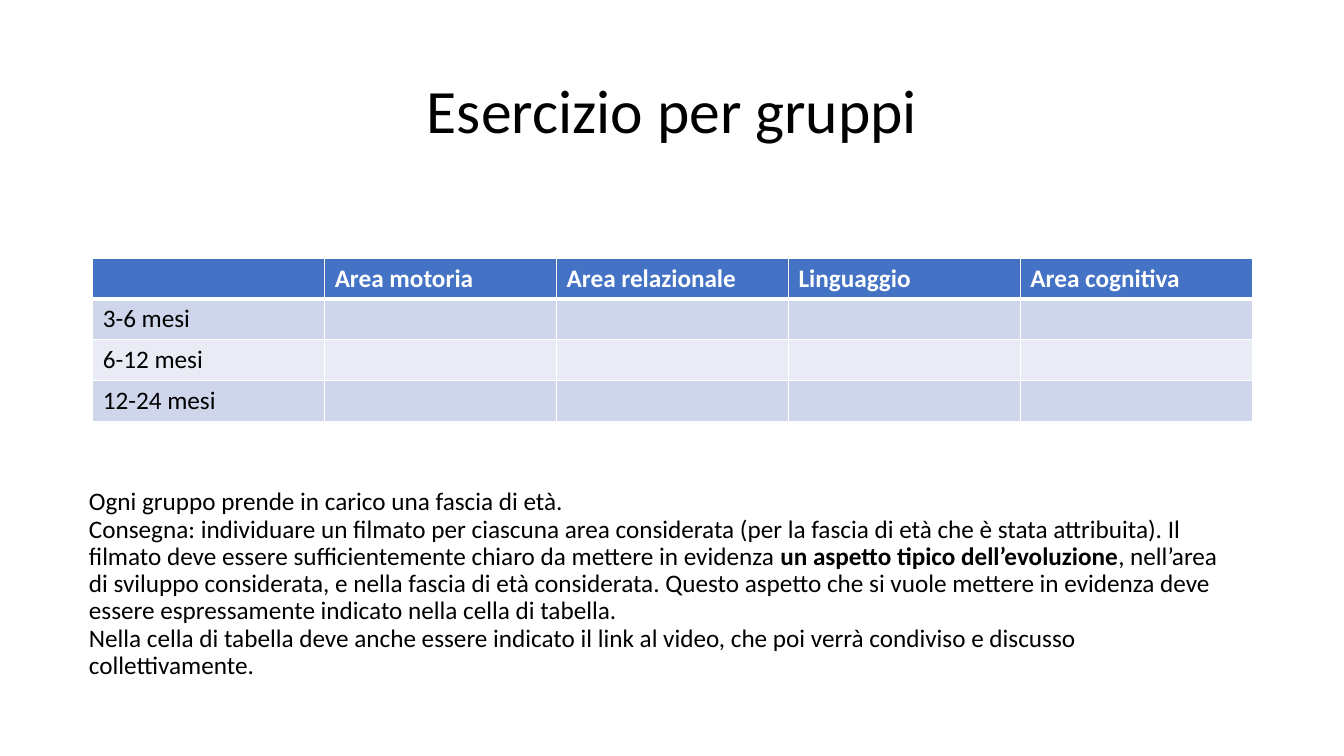
"""Build a slide with a group exercise: title, table to fill in and task."""
import lxml.etree
import pptx
import pptx.dml.color
import pptx.enum.text
import pptx.oxml
import pptx.oxml.ns
import pptx.util

INK = {"text": "000000", "head": "4472C4", "odd": "CFD5EA",
       "even": "E9EBF5", "white": "FFFFFF"}
HEADS = ["", "Area motoria", "Area relazionale", "Linguaggio", "Area cognitiva"]
AGES = ["3-6 mesi", "6-12 mesi", "12-24 mesi"]
TASK = [
    ["Ogni gruppo prende in carico una fascia di età."],
    ["Consegna: individuare un filmato per ciascuna area considerata (per la "
     "fascia di età che è stata attribuita). Il filmato deve essere "
     "sufficientemente chiaro da mettere in evidenza ",
     "un aspetto tipico dell’evoluzione",
     ", nell’area di sviluppo considerata, e nella fascia di età considerata. "
     "Questo aspetto che si vuole mettere in evidenza deve essere "
     "espressamente indicato nella cella di tabella."],
    ["Nella cella di tabella deve anche essere indicato il link al video, "
     "che poi verrà condiviso e discusso collettivamente."],
]


def tint(name):
    return pptx.dml.color.RGBColor.from_string(INK[name])


class Deck:
    FACE = "Calibri"
    LEFT, COL, ROW = 0.92, 2.3, 0.405

    def __init__(self):
        self.prs = pptx.Presentation()
        self.prs.slide_width = pptx.util.Inches(13.33)
        self.prs.slide_height = pptx.util.Inches(7.5)
        self.slide = self.prs.slides.add_slide(self.prs.slide_layouts[1])

    def grid(self, col, row, wide, high):
        spots = (self.LEFT + col * self.COL, row * self.ROW,
                 wide * self.COL, high * self.ROW)
        return [pptx.util.Inches(spot) for spot in spots]

    def style(self, par, size, ink="text", bold=False):
        for font in [par.font] + [run.font for run in par.runs]:
            font.name = self.FACE
            font.size = pptx.util.Pt(size)
            font.bold = bold
            font.color.rgb = tint(ink)

    def place(self, shape, spot):
        shape.left, shape.top, shape.width, shape.height = self.grid(*spot)
        frame = shape.text_frame
        frame.word_wrap = True
        frame.auto_size = pptx.enum.text.MSO_AUTO_SIZE.NONE
        frame.vertical_anchor = pptx.enum.text.MSO_ANCHOR.MIDDLE
        return frame

    def title(self, text, spot):
        frame = self.place(self.slide.shapes.title, spot)
        frame.text = text
        par = frame.paragraphs[0]
        par.alignment = pptx.enum.text.PP_ALIGN.CENTER
        par.line_spacing = 0.9
        self.style(par, 44)

    def body(self, items, spot):
        frame = self.place(self.slide.placeholders[1], spot)
        frame.margin_bottom = pptx.util.Inches(0.32)
        for i, parts in enumerate(items):
            par = frame.add_paragraph() if i else frame.paragraphs[0]
            props = par._p.get_or_add_pPr()
            props.set("marL", "0")
            props.set("indent", "0")
            lxml.etree.SubElement(props, pptx.oxml.ns.qn("a:buNone"))
            par.line_spacing = 0.9
            par.space_before = pptx.util.Pt(0)
            for part in parts:
                par.add_run().text = part
            self.style(par, 18)
            for run in par.runs[1::2]:
                run.font.bold = True

    def edge(self, cell, top, base):
        props = cell._tc.get_or_add_tcPr()
        sides = {"L": 1, "R": 1, "T": top, "B": base}
        for i, (side, width) in enumerate(sides.items()):
            props.insert(i, pptx.oxml.parse_xml(
                f'<a:ln{side} {pptx.oxml.ns.nsdecls("a")} '
                f'w="{pptx.util.Pt(width)}"><a:solidFill>'
                f'<a:srgbClr val="{INK["white"]}"/></a:solidFill></a:ln{side}>'))

    def table(self, rows, spot):
        shape = self.slide.shapes.add_table(len(rows), len(rows[0]), *self.grid(*spot))
        for r, row in enumerate(rows):
            fill = "head" if r == 0 else "odd" if r % 2 else "even"
            for c, text in enumerate(row):
                cell = shape.table.cell(r, c)
                cell.text = text
                cell.fill.solid()
                cell.fill.fore_color.rgb = tint(fill)
                self.style(cell.text_frame.paragraphs[0], 18,
                           "text" if r else "white", r == 0)
                self.edge(cell, 3 if r == 1 else 1, 1 if r else 3)


def main():
    deck = Deck()
    deck.title("Esercizio per gruppi", (0, 1, 5, 3.58))
    blank = [""] * (len(HEADS) - 1)
    deck.table([HEADS] + [[age] + blank for age in AGES], (0, 6.32, 5, 4))
    deck.body(TASK, (-0.06, 12.86, 5, 3.58))
    deck.prs.save("out.pptx")


if __name__ == "__main__":
    main()
